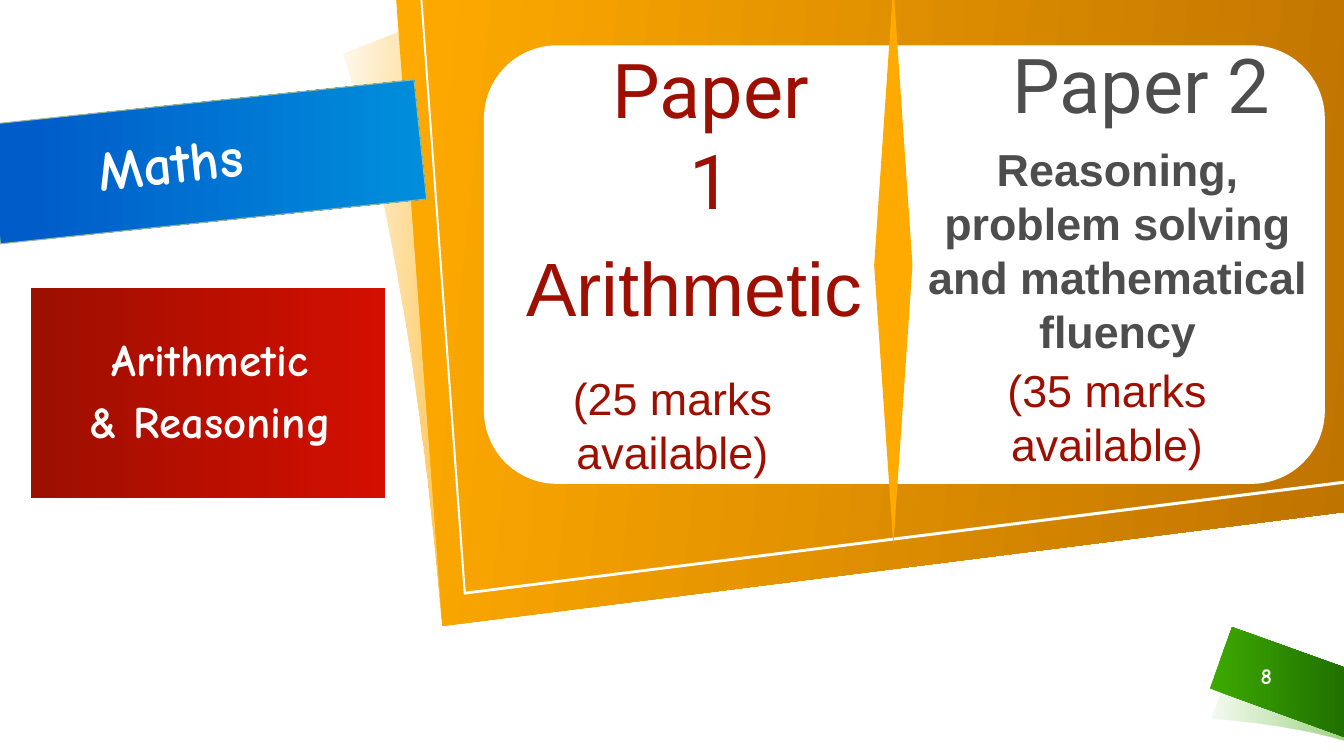
from lxml import etree
from pptx import Presentation
from pptx.dml.color import RGBColor
from pptx.enum.shapes import MSO_SHAPE
from pptx.enum.text import MSO_ANCHOR, MSO_AUTO_SIZE, PP_ALIGN
from pptx.oxml.ns import qn
from pptx.util import Pt

RECTANGLE = MSO_SHAPE.RECTANGLE
ROUNDED = MSO_SHAPE.ROUNDED_RECTANGLE
DIAMOND = MSO_SHAPE.FLOWCHART_DECISION
TOP, MIDDLE = MSO_ANCHOR.TOP, MSO_ANCHOR.MIDDLE
LEFT, CENTER = PP_ALIGN.LEFT, PP_ALIGN.CENTER
FIXED, GROW = MSO_AUTO_SIZE.NONE, MSO_AUTO_SIZE.SHAPE_TO_FIT_TEXT

EMU_PER_PX = 9144
TITLE_ONLY = 5
CURVE_STEPS = 16
WHITE, RED, GREY = "FFFFFF", "9D0F00", "4D4D4D"
AMBER, GREEN = "FFAA00", "3DA800"
COMIC, ROBOTO, ARIAL = "Comic Neue", "Roboto", "Arial"


def px(value):
    return int(value * EMU_PER_PX)


def color(hex_string):
    return RGBColor.from_string(hex_string)


def curve(start, control_1, control_2, end):
    points = []
    for step in range(1, CURVE_STEPS + 1):
        t = step / CURVE_STEPS
        weights = ((1 - t) ** 3, 3 * t * (1 - t) ** 2, 3 * t * t * (1 - t), t ** 3)
        corners = (start, control_1, control_2, end)
        points.append(tuple(sum(weight * corner[axis] for weight, corner in zip(weights, corners))
                            for axis in (0, 1)))
    return points


def write(shape, text, size=32, font=ARIAL, ink=RED, bold=False, align=CENTER,
          anchor=TOP, fit=FIXED, insets=(10, 5, 10, 5), line_spacing=None, gap=0):
    frame = shape.text_frame
    frame.word_wrap = True
    frame.auto_size = fit
    frame.vertical_anchor = anchor
    frame.margin_left, frame.margin_top, frame.margin_right, frame.margin_bottom = map(px, insets)
    for index, line in enumerate(text.split("\n")):
        para = frame.add_paragraph() if index else frame.paragraphs[0]
        para.alignment = align
        para.line_spacing = line_spacing
        para.space_before = Pt(gap if index else 0)
        span = para.add_run()
        span.text = line
        span.font.size = Pt(size)
        span.font.name = font
        span.font.bold = bold
        span.font.color.rgb = color(ink)


class SlideBuilder:
    def __init__(self, deck):
        self.page = deck.slides.add_slide(deck.slide_layouts[TITLE_ONLY])

    def paint(self, shape, fill, angle=0):
        if isinstance(fill, str):
            shape.fill.solid()
            shape.fill.fore_color.rgb = color(fill)
            return
        shape.fill.gradient()
        shape.fill.gradient_angle = (360 - angle) % 360
        stops = shape._element.spPr.find(qn("a:gradFill")).find(qn("a:gsLst"))
        for stop in list(stops):
            stops.remove(stop)
        for position, tone, opacity in fill:
            stop = etree.SubElement(stops, qn("a:gs"), pos=str(position * 1000))
            tint = etree.SubElement(stop, qn("a:srgbClr"), val=tone)
            if opacity < 100:
                etree.SubElement(tint, qn("a:alpha"), val=str(opacity * 1000))

    def finish(self, shape, fill, angle):
        shape.shadow.inherit = False
        shape.line.fill.background()
        self.paint(shape, fill, angle)
        return shape

    def outline(self, points, fill, angle=0):
        builder = self.page.shapes.build_freeform(*map(px, points[0]), scale=1.0)
        builder.add_line_segments([(px(x), px(y)) for x, y in points[1:]], close=True)
        return self.finish(builder.convert_to_shape(), fill, angle)

    def shape(self, kind, bounds, fill, angle=0):
        shape = self.page.shapes.add_shape(kind, *map(px, bounds))
        return self.finish(shape, fill, angle)

    def text(self, bounds, text, **style):
        box = self.page.shapes.add_textbox(*map(px, bounds))
        write(box, text, **style)

    def title(self, bounds, text, fill, angle, rotation, border, **style):
        title = self.page.shapes.title
        self.page.shapes._spTree.append(title._element)
        title.left, title.top, title.width, title.height = map(px, bounds)
        title.rotation = rotation
        self.paint(title, fill, angle)
        title.line.color.rgb = color(border)
        title.line.width = Pt(0.75)
        write(title, text, **style)


def draw_backdrop(slide):
    fold = [(1202, 713), *curve((1202, 713), (1202, 713), (1278, 718), (1333, 735)),
            (1333, 668), *curve((1333, 668), (1272, 651), (1224, 652), (1224, 652))]
    slide.outline(fold, [(0, GREEN, 6), (3, GREEN, 6), (100, GREEN, 50)])
    slide.outline([(1333, 662), (1222, 622), (1200, 683), (1333, 731)],
                  [(0, GREEN, 100), (3, GREEN, 100), (100, "1F7100", 100)])
    flap = [(479, 0), *curve((479, 0), (435, 15), (340, 54), (340, 54)),
            *curve((340, 54), (340, 54), (403, 207), (438, 619)),
            *curve((438, 619), (456, 612), (517, 599), (517, 599)),
            *curve((517, 599), (517, 599), (502, 61), (501, 0))]
    slide.outline(flap, [(0, AMBER, 5), (100, AMBER, 100)], 6)
    slide.outline([(1333, 508), (1333, 0), (393, 0), (439, 621)],
                  [(0, AMBER, 100), (100, "C07400", 100)], 6)
    slide.outline([(1333, 477), (462, 587), (419, 0), (417, 0), (460, 589), (460, 590), (1333, 480)],
                  WHITE)


def main():
    deck = Presentation()
    deck.slide_width, deck.slide_height = px(1333), px(750)
    slide = SlideBuilder(deck)
    draw_backdrop(slide)

    slide.text((1221, 650, 70, 40), "8", size=16, font=COMIC, ink=WHITE, bold=True, anchor=MIDDLE)
    topics = slide.shape(RECTANGLE, (31, 286, 351, 208), [(0, "D30F00", 100), (100, RED, 100)], 180)
    write(topics, "Arithmetic\n& Reasoning", font=COMIC, ink=WHITE, bold=True, anchor=MIDDLE,
          insets=(16, 12, 12, 12), line_spacing=0.9, gap=10)
    slide.title((-7, 101, 425, 119), "Maths",
                [(0, "005CC9", 100), (9, "005CC9", 100), (100, "008EDC", 100)], 6, 354, "99B898",
                size=40, font=COMIC, ink=WHITE, bold=True, align=LEFT, anchor=MIDDLE,
                insets=(104, 5, 10, 5), line_spacing=0.9)

    slide.shape(ROUNDED, (480, 45, 834, 435), WHITE)
    slide.text((570, 38, 270, 101), "Paper 1", size=54, font=ROBOTO, fit=GROW)
    slide.shape(DIAMOND, (867, -15, 38, 556), AMBER)
    slide.text((960, 33, 344, 101), "Paper 2", size=54, font=ROBOTO, ink=GREY, fit=GROW)
    slide.text((891, 136, 435, 226), "Reasoning, problem solving and mathematical fluency",
               ink=GREY, bold=True, fit=GROW)
    slide.text((510, 234, 357, 101), "Arithmetic", size=54, fit=GROW)
    for left, top, marks in ((461, 363, 25), (892, 355, 35)):
        slide.text((left, top, 412, 118), f"({marks} marks available)", fit=GROW)

    deck.save("out.pptx")


if __name__ == "__main__":
    main()
